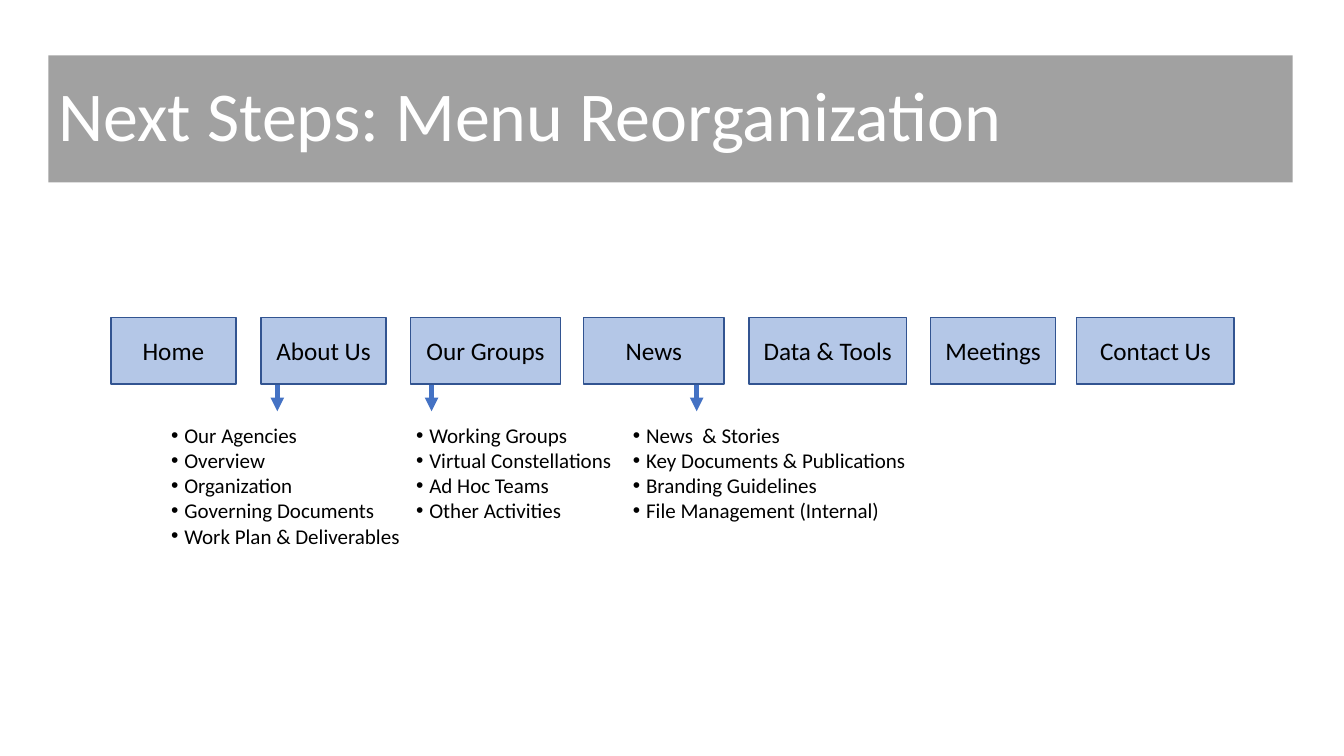
from lxml.etree import SubElement
from pptx import Presentation
from pptx.dml.color import RGBColor
from pptx.enum.shapes import MSO_CONNECTOR as Connector, MSO_SHAPE as Shape
from pptx.enum.text import MSO_ANCHOR as Anchor, MSO_AUTO_SIZE as AutoSize, PP_ALIGN as Align
from pptx.oxml.ns import qn
from pptx.util import Pt

PX = 9144  # 100 px to the inch
COLORS = {
    "black": "000000", "white": "FFFFFF",
    "box": "B4C7E7", "box_line": "325491", "arrow": "4472C4",
}
FONT = "Calibri"
TITLE_OPACITY = 37

# Menu boxes: label, left, width
MENU = [
    ("Home", 110, 124), ("About Us", 259, 124), ("Our Groups", 407, 149),
    ("News", 579, 139), ("Data & Tools", 743, 156), ("Meetings", 923, 124),
    ("Contact Us", 1068, 156),
]
# Submenus: arrow x, list left, list width, entries
SUBMENUS = [
    (275, 160, 265, ["Our Agencies", "Overview", "Organization",
                     "Governing Documents", "Work Plan & Deliverables"]),
    (428, 403, 222, ["Working Groups", "Virtual Constellations",
                     "Ad Hoc Teams", "Other Activities"]),
    (691, 618, 313, ["News  & Stories", "Key Documents & Publications",
                     "Branding Guidelines", "File Management (Internal)"]),
]


def px(*lengths):
    return [length * PX for length in lengths]


def color(name):
    return RGBColor.from_string(COLORS[name])


def apply(target, values):
    for name, value in values.items():
        setattr(target, name, value)


def write(paragraph, text, size, color_name, **values):
    run = paragraph.add_run()
    run.text = text
    apply(run.font, {"name": FONT, "size": Pt(size)})
    run.font.color.rgb = color(color_name)
    apply(paragraph, values)


def add_title(slide, left, top, width, height):
    title = slide.shapes.title
    apply(title, dict(zip(("left", "top", "width", "height"), px(left, top, width, height))))
    title.fill.solid()
    title.fill.fore_color.rgb = color("black")
    # Translucent fill
    fill_color = title.fill._xPr.find(qn("a:solidFill"))[0]
    SubElement(fill_color, qn("a:alpha"), val=str(TITLE_OPACITY * 1000))
    apply(title.text_frame, {"vertical_anchor": Anchor.MIDDLE, "word_wrap": True,
                             "auto_size": AutoSize.NONE})
    write(title.text_frame.paragraphs[0], "Next Steps: Menu Reorganization", 50, "white",
          alignment=Align.LEFT, line_spacing=0.9, space_after=Pt(6))


def add_arrow(slide, x, top, bottom):
    arrow = slide.shapes.add_connector(Connector.STRAIGHT, *px(x, top, x, bottom))
    arrow.line.color.rgb = color("arrow")
    arrow.line.width = Pt(3.25)
    SubElement(arrow.line._get_or_add_ln(), qn("a:tailEnd"), type="triangle")
    SubElement(arrow._element.spPr, qn("a:effectLst"))


def add_menu_box(slide, label, left, top, width, height):
    box = slide.shapes.add_shape(Shape.RECTANGLE, *px(left, top, width, height))
    box.shadow.inherit = False
    box.fill.solid()
    box.fill.fore_color.rgb = color("box")
    box.line.color.rgb = color("box_line")
    box.line.width = Pt(1)
    apply(box.text_frame, {"vertical_anchor": Anchor.MIDDLE, "word_wrap": True})
    write(box.text_frame.paragraphs[0], label, 18, "black", alignment=Align.CENTER)


def add_submenu(slide, entries, left, top, width):
    height = 11 + 25 * len(entries)
    frame = slide.shapes.add_textbox(*px(left, top, width, height)).text_frame
    apply(frame, {"word_wrap": True, "auto_size": AutoSize.SHAPE_TO_FIT_TEXT})
    indent = 13 * PX
    for index, entry in enumerate(entries):
        paragraph = frame.add_paragraph() if index else frame.paragraphs[0]
        write(paragraph, entry, 15, "black")
        properties = paragraph._p.get_or_add_pPr()
        properties.set("marL", str(indent))
        properties.set("indent", str(-indent))
        SubElement(properties, qn("a:buFont"), typeface="Arial")
        SubElement(properties, qn("a:buChar"), char="•")


def add_menu(slide, top, box_height):
    # Arrows lie behind the boxes
    for x, left, width, entries in SUBMENUS:
        add_arrow(slide, x, top + box_height - 6, top + box_height + 27)
        add_submenu(slide, entries, left, top + box_height + 33, width)
    for label, left, width in MENU:
        add_menu_box(slide, label, left, top, width, box_height)


def main():
    presentation = Presentation()
    presentation.slide_width, presentation.slide_height = px(1333, 750)
    slide = presentation.slides.add_slide(presentation.slide_layouts[5])
    add_title(slide, 48, 55, 1234, 126)
    add_menu(slide, 315, 66)
    presentation.save("out.pptx")


if __name__ == "__main__":
    main()
